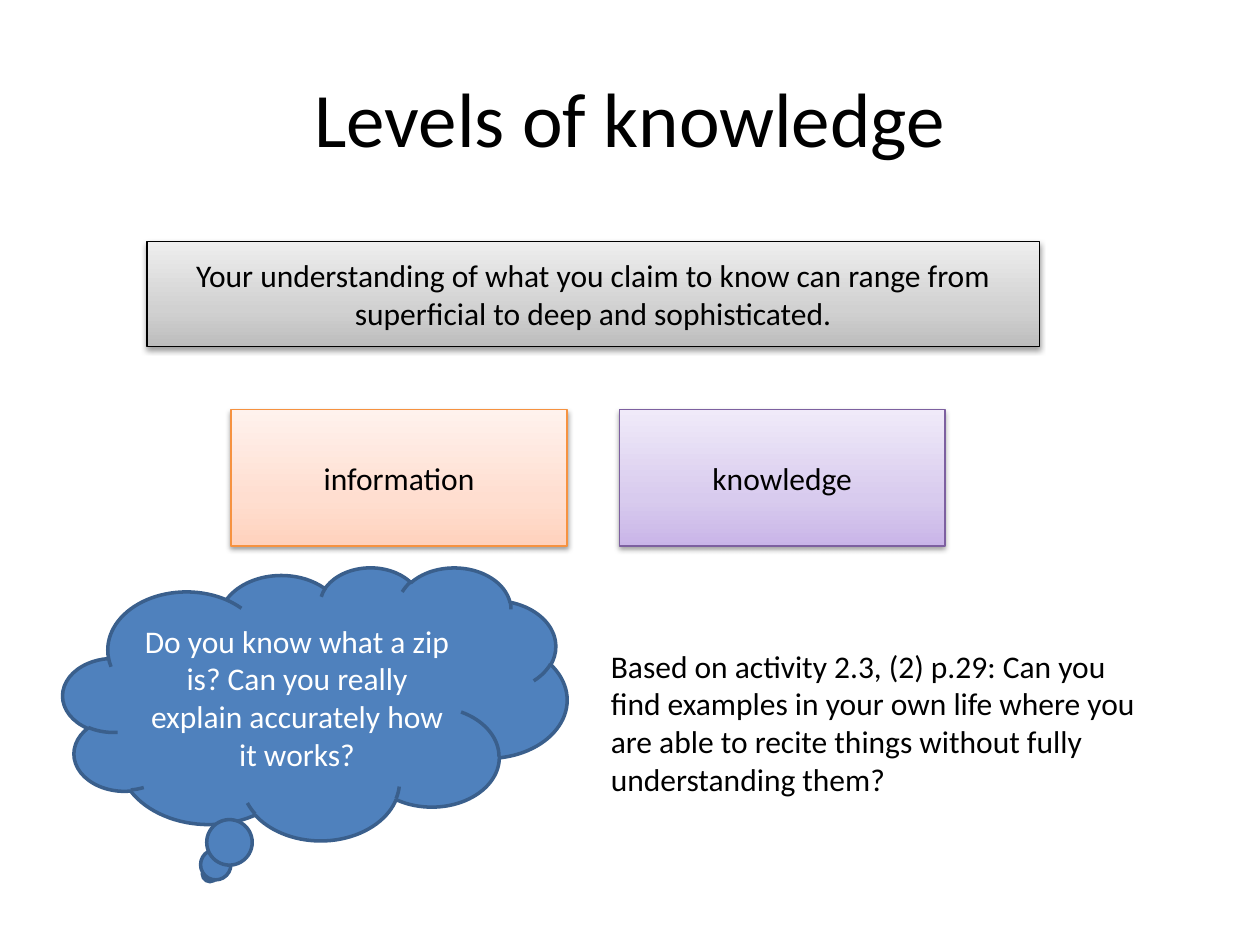
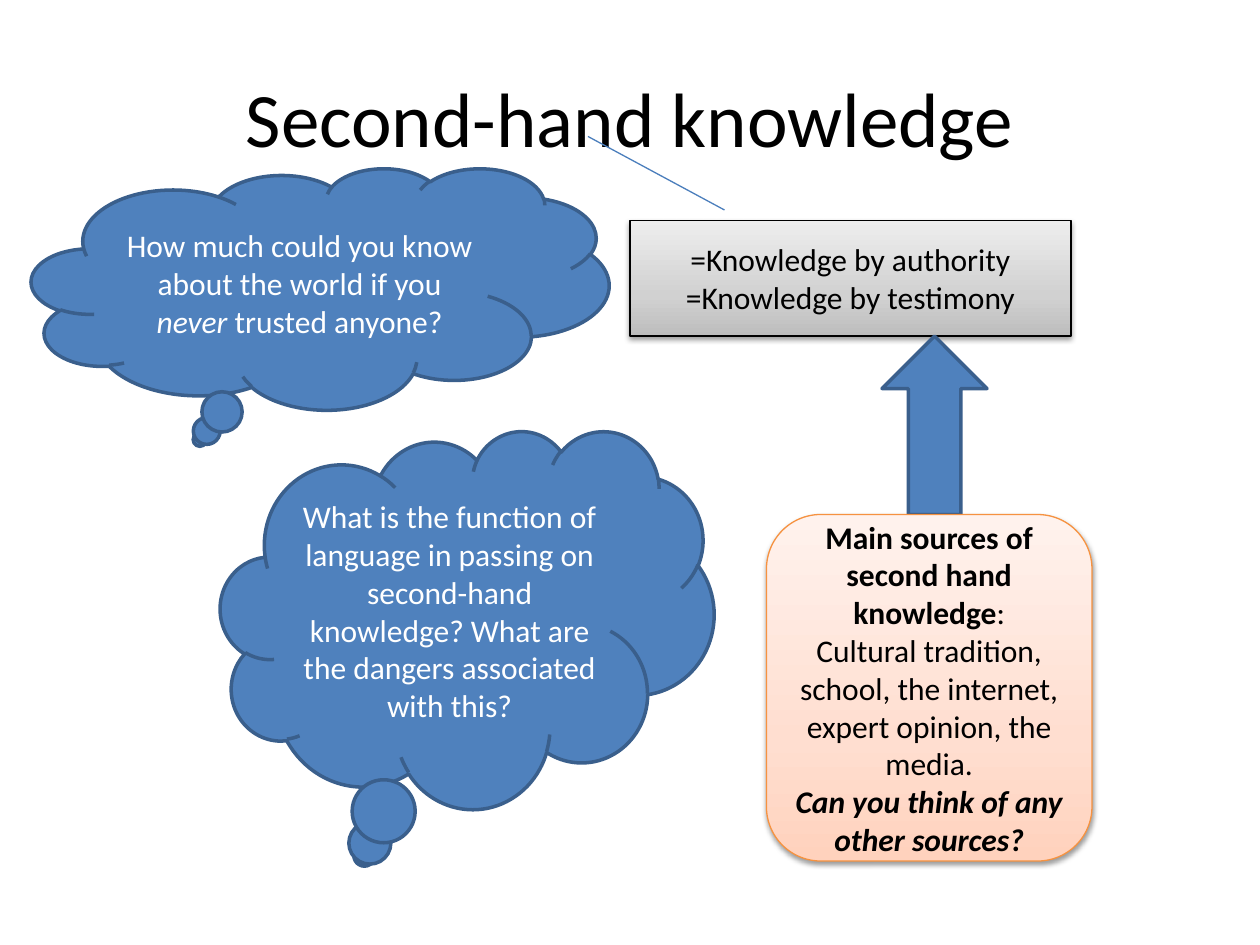
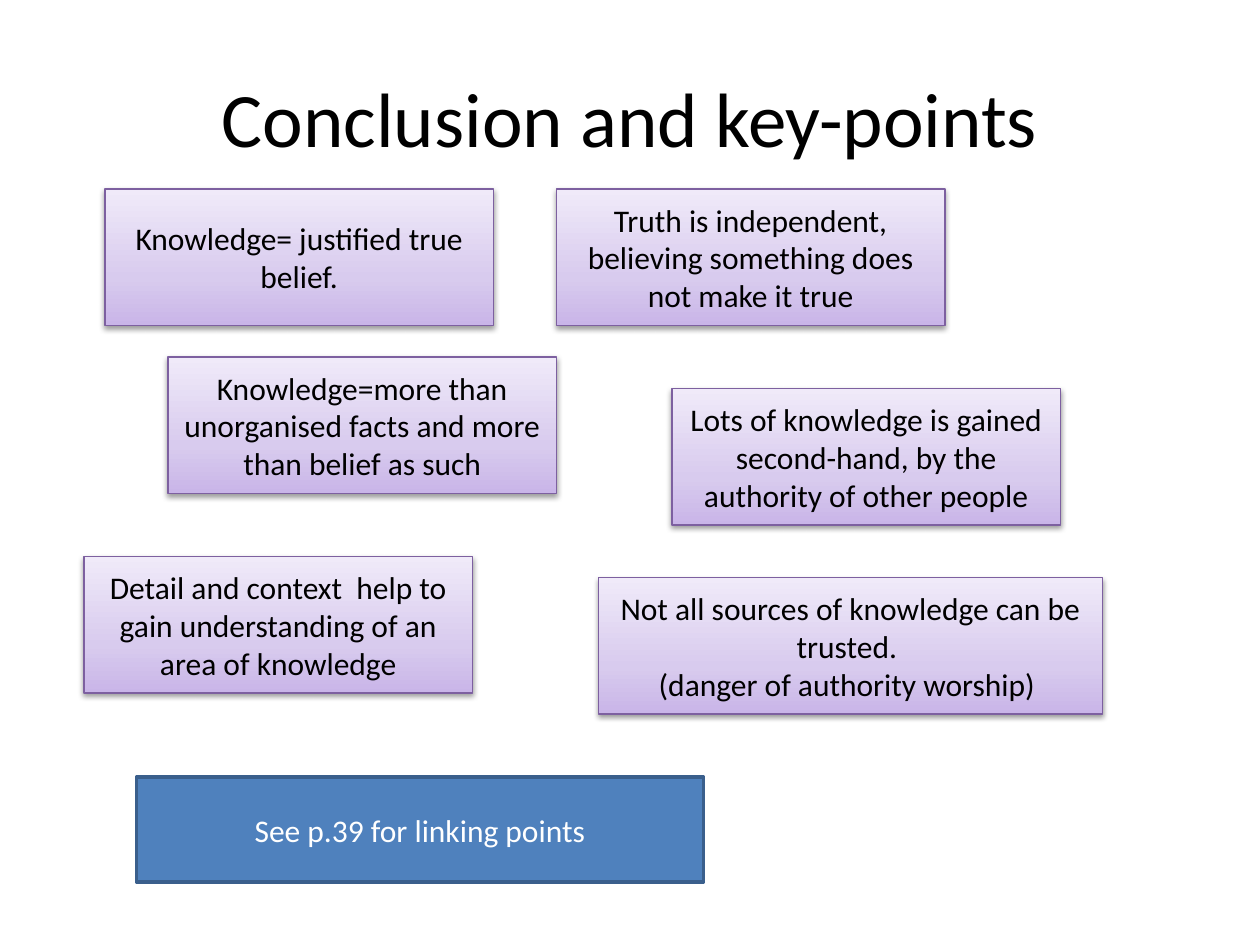
import copy

import lxml.etree
import pptx
import pptx.dml.color
import pptx.enum.shapes
import pptx.enum.text
import pptx.oxml.ns
import pptx.util

Pt = pptx.util.Pt
SHAPES = pptx.enum.shapes.MSO_SHAPE
ALIGN = pptx.enum.text.PP_ALIGN
ANCHOR = pptx.enum.text.MSO_ANCHOR
qn = pptx.oxml.ns.qn

FONT = "Calibri"
BLACK, WHITE = "000000", "FFFFFF"
BLUE, DARK_BLUE, LINE_BLUE = "4F81BD", "3A5F8C", "4B7EBC"
GREY = (["BDBDBD", "D1D1D1", "EEEEEE"], BLACK)
ORANGE = (["FFD2BD", "FFDED0", "FFF2ED"], "F69240")
PURPLE = (["C9B5E8", "D8CBEE", "F0EAF9"], "7D60A0")
STOP_POSITIONS = [0, 0.35, 1]

KEY_POINTS = [
    (60, 108, 222, ["Knowledge= justified true belief."]),
    (96, 204, 222, ["Knowledge=more than unorganised facts and more than belief as such"]),
    (48, 318, 222, ["Detail and context  help to gain understanding of an area of knowledge"]),
    (384, 222, 222, ["Lots of knowledge is gained second-hand, by the authority of other people"]),
    (342, 330, 288, ["Not all sources of knowledge can be trusted. ", "(danger of authority worship) "]),
    (318, 108, 222, ["Truth is independent, believing something does not make it true"]),
]


def color(hex_string):
    return pptx.dml.color.RGBColor.from_string(hex_string)


def write(box, paragraphs, size=18, ink=BLACK, align=ALIGN.CENTER, anchor=ANCHOR.MIDDLE):
    frame = box.text_frame
    frame.word_wrap = True
    frame.vertical_anchor = anchor
    for index, content in enumerate(paragraphs):
        para = frame.add_paragraph() if index else frame.paragraphs[0]
        para.alignment = align
        spans = [(content, "")] if isinstance(content, str) else content
        for text, style in spans:
            span = para.add_run()
            span.text = text
            span.font.name = FONT
            span.font.size = Pt(size)
            span.font.color.rgb = color(ink)
            span.font.bold = "b" in style
            span.font.italic = "i" in style


def add_text(page, bounds, paragraphs, **options):
    box = page.shapes.add_textbox(*map(Pt, bounds))
    write(box, paragraphs, **options)


def add_outlined_shape(page, kind, bounds, line_color, line_width):
    shape = page.shapes.add_shape(kind, *map(Pt, bounds))
    shape.shadow.inherit = False
    shape.line.color.rgb = color(line_color)
    shape.line.width = Pt(line_width)
    return shape


def add_blue_shape(page, kind, bounds, paragraphs=()):
    shape = add_outlined_shape(page, kind, bounds, DARK_BLUE, 2)
    shape.fill.solid()
    shape.fill.fore_color.rgb = color(BLUE)
    write(shape, paragraphs, ink=WHITE)
    return shape


def fill_gradient(shape, hex_strings):
    shape.fill.gradient()
    shape.fill.gradient_angle = 90
    stop_list = shape._element.spPr.find(".//" + qn("a:gsLst"))
    stop_list.append(copy.deepcopy(stop_list[0]))
    for stop, position, hex_string in zip(shape.fill.gradient_stops, STOP_POSITIONS, hex_strings):
        stop.position = position
        stop.color.rgb = color(hex_string)


def add_soft_shadow(shape):
    effects = shape._element.spPr.find(qn("a:effectLst"))
    shadow = lxml.etree.SubElement(
        effects, qn("a:outerShdw"), blurRad=str(Pt(3.1)), dist=str(Pt(1.6)),
        dir="5400000", rotWithShape="0")
    tint = lxml.etree.SubElement(shadow, qn("a:srgbClr"), val=BLACK)
    lxml.etree.SubElement(tint, qn("a:alpha"), val="38000")


def add_card(page, bounds, theme, paragraphs, kind=SHAPES.RECTANGLE):
    hex_strings, line_color = theme
    card = add_outlined_shape(page, kind, bounds, line_color, 0.75)
    fill_gradient(card, hex_strings)
    add_soft_shadow(card)
    write(card, paragraphs)


def add_line(page, start, end):
    line = page.shapes.add_connector(
        pptx.enum.shapes.MSO_CONNECTOR.STRAIGHT, *map(Pt, start + end))
    line.line.color.rgb = color(LINE_BLUE)
    line.line.width = Pt(0.75)
    lxml.etree.SubElement(line._element.spPr, qn("a:effectLst"))


def add_page(deck, title):
    page = deck.slides.add_slide(deck.slide_layouts[6])
    add_text(page, (36, 21.6, 648, 90), [title], size=44)
    return page


def build_levels(deck):
    page = add_page(deck, "Levels of knowledge")
    add_card(page, (84, 138, 510, 60), GREY, [
        "Your understanding of what you claim to know can range from "
        "superficial to deep and sophisticated."])
    add_card(page, (132, 234, 192, 78), ORANGE, ["information"])
    add_card(page, (354, 234, 186, 78), PURPLE, ["knowledge"])
    add_blue_shape(page, SHAPES.CLOUD_CALLOUT, (36, 324, 288, 156), [
        "Do you know what a zip is? Can you really explain accurately how it works?"])
    add_text(page, (342, 366, 318, 94.5), [
        "Based on activity 2.3, (2) p.29: Can you find examples in your own life "
        "where you are able to recite things without fully understanding them?"],
        align=ALIGN.LEFT, anchor=ANCHOR.TOP)


def build_second_hand(deck):
    page = add_page(deck, "Second-hand knowledge")
    add_blue_shape(page, SHAPES.CLOUD_CALLOUT, (18, 96, 330, 138), [[
        ("How much could you know about the world if you ", ""),
        ("never", "i"),
        (" trusted anyone?", "")]])
    add_line(page, (336, 78), (414, 120))
    add_card(page, (360, 126, 252, 66), GREY, [
        "=Knowledge by authority", "=Knowledge by testimony"])
    add_blue_shape(page, SHAPES.CLOUD_CALLOUT, (126, 246, 282, 216), [
        "What is the function of language in passing on second-hand knowledge? "
        "What are the dangers associated with this?"])
    arrow = add_blue_shape(page, SHAPES.DOWN_ARROW, (504, 192, 60, 102))
    arrow.rotation = 180
    add_card(page, (438, 294, 186, 198), ORANGE, [
        [("Main sources of second hand knowledge", "b"), (":", "")],
        "Cultural tradition, school, the internet, expert opinion, the media.",
        [("Can you think of any other sources?", "bi")]],
        kind=SHAPES.ROUNDED_RECTANGLE)


def build_conclusion(deck):
    page = add_page(deck, "Conclusion and key-points")
    add_blue_shape(page, SHAPES.RECTANGLE, (78, 444, 324, 60), ["See p.39 for linking points"])
    for left, top, width, paragraphs in KEY_POINTS:
        add_card(page, (left, top, width, 78), PURPLE, paragraphs)


def main():
    deck = pptx.Presentation()
    deck.slide_width, deck.slide_height = Pt(720), Pt(540)
    build_levels(deck)
    build_second_hand(deck)
    build_conclusion(deck)
    deck.save("out.pptx")


if __name__ == "__main__":
    main()
